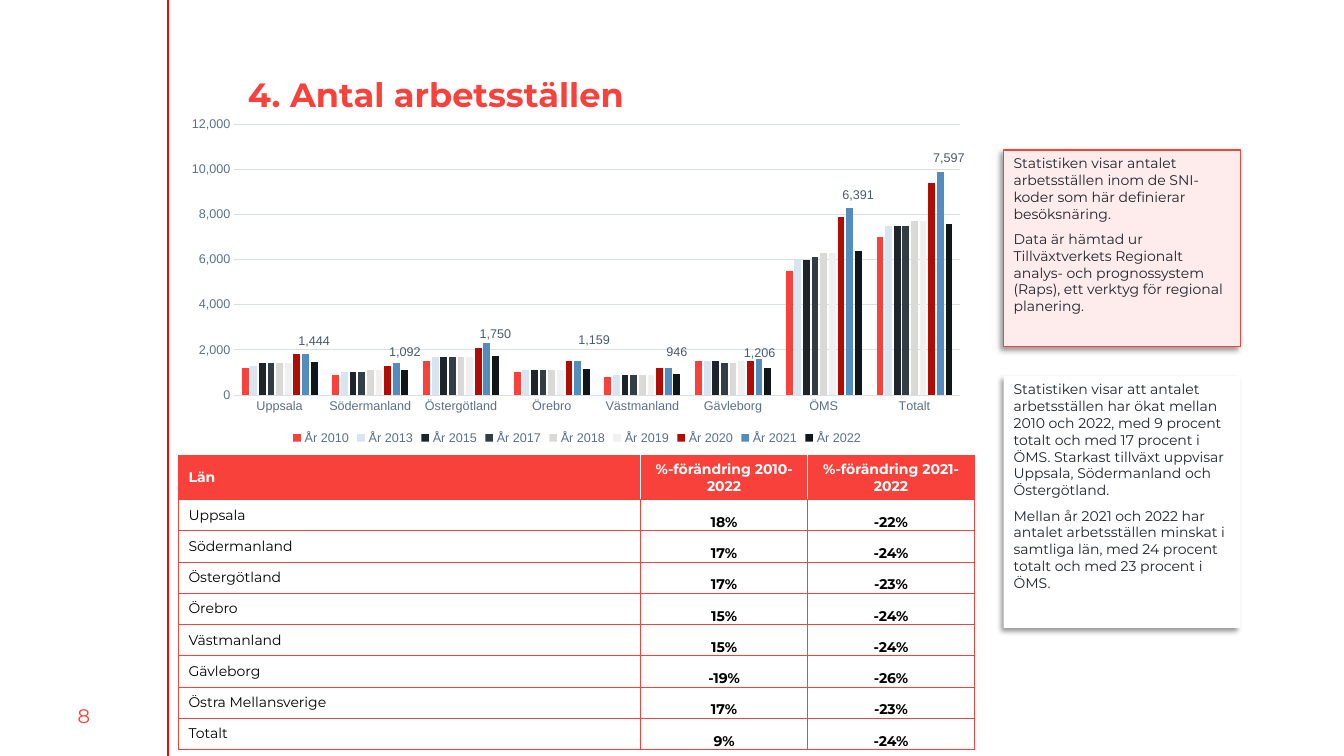
import pptx
import pptx.chart.data
import pptx.dml.color
import pptx.enum.chart
import pptx.enum.shapes
import pptx.enum.text
import pptx.oxml
import pptx.oxml.ns
import pptx.util

Pt = pptx.util.Pt
RGB = pptx.dml.color.RGBColor
qn = pptx.oxml.ns.qn
ALIGN = pptx.enum.text.PP_ALIGN
ANCHOR = pptx.enum.text.MSO_ANCHOR
KIND = pptx.enum.chart

RED = RGB(0xF8, 0x41, 0x3A)
RULE = RGB(0xFF, 0x00, 0x00)
PINK = RGB(0xFE, 0xEC, 0xEC)
WHITE = RGB(0xFF, 0xFF, 0xFF)
BLACK = RGB(0x00, 0x00, 0x00)
INK = RGB(0x1D, 0x24, 0x2B)
SLATE = RGB(0x5B, 0x71, 0x87)
LABEL = RGB(0x49, 0x5B, 0x6C)
GRID = RGB(0xD8, 0xDE, 0xE5)
PALE = RGB(0xD8, 0xE5, 0xF0)
COAL = RGB(0x33, 0x3D, 0x46)
GREY = RGB(0xD9, 0xD9, 0xD6)
MIST = RGB(0xF0, 0xF0, 0xF0)
WINE = RGB(0xB1, 0x0D, 0x06)
BLUE = RGB(0x54, 0x8D, 0xBD)
NIGHT = RGB(0x11, 0x16, 0x1A)

PLACES = ["Uppsala", "Södermanland", "Östergötland", "Örebro",
          "Västmanland", "Gävleborg", "ÖMS", "Totalt"]
YEARS = [
    ("År 2010", RED, [1200, 900, 1500, 1000, 800, 1500, 5500, 7000]),
    ("År 2013", PALE, [1300, 1000, 1700, 1100, 900, 1500, 6000, 7500]),
    ("År 2015", INK, [1400, 1000, 1700, 1100, 900, 1500, 6000, 7500]),
    ("År 2017", COAL, [1400, 1000, 1700, 1100, 900, 1400, 6100, 7500]),
    ("År 2018", GREY, [1400, 1100, 1700, 1100, 900, 1400, 6300, 7700]),
    ("År 2019", MIST, [1400, 1100, 1700, 1100, 900, 1500, 6300, 7700]),
    ("År 2020", WINE, [1800, 1300, 2100, 1500, 1200, 1500, 7900, 9400]),
    ("År 2021", BLUE, [1800, 1400, 2300, 1500, 1200, 1600, 8300, 9900]),
    ("År 2022", NIGHT, [1444, 1092, 1750, 1159, 946, 1206, 6391, 7597]),
]
SHIFTS = [(0, -0.03), (0, -0.02), (0, -0.03), (0.01, -0.05),
          (0, -0.03), (-0.01, -0.01), (0, -0.13), (0, -0.16)]
ROWS = [
    ("Län", "%-förändring 2010-2022", "%-förändring 2021-2022"),
    ("Uppsala", "18%", "-22%"),
    ("Södermanland", "17%", "-24%"),
    ("Östergötland", "17%", "-23%"),
    ("Örebro", "15%", "-24%"),
    ("Västmanland", "15%", "-24%"),
    ("Gävleborg", "-19%", "-26%"),
    ("Östra Mellansverige", "17%", "-23%"),
    ("Totalt", "9%", "-24%"),
]
ABOUT = [
    "Statistiken visar antalet arbetsställen inom de SNI-koder som här "
    "definierar besöksnäring.",
    "Data är hämtad ur Tillväxtverkets Regionalt analys- och prognossystem "
    "(Raps), ett verktyg för regional planering.",
]
RESULT = [
    "Statistiken visar att antalet arbetsställen har ökat mellan 2010 och "
    "2022, med 9 procent totalt och med 17 procent i ÖMS. Starkast tillväxt "
    "uppvisar Uppsala, Södermanland och Östergötland.",
    "Mellan år 2021 och 2022 har antalet arbetsställen minskat i samtliga "
    "län, med 24 procent totalt och med 23 procent i ÖMS.",
]


def style(font, size, color, bold=False, face="Montserrat"):
    font.size, font.name, font.bold = Pt(size), face, bold
    font.color.rgb = color


def layout(x, y, w=None, h=None):
    size = f'<c:w val="{w}"/><c:h val="{h}"/>' if w else ""
    inner = '<c:layoutTarget val="inner"/>' if w else ""
    mode = '<c:xMode val="edge"/><c:yMode val="edge"/>' if w else ""
    return pptx.oxml.parse_xml(
        f'<c:layout {pptx.oxml.ns.nsdecls("c")}><c:manualLayout>{inner}{mode}'
        f'<c:x val="{x}"/><c:y val="{y}"/>{size}</c:manualLayout></c:layout>')


def add_text(slide, box, words, size, bold=False, inset=3.6,
             align=ALIGN.LEFT, anchor=ANCHOR.TOP):
    frame = slide.shapes.add_textbox(*map(Pt, box)).text_frame
    frame.word_wrap = True
    frame.vertical_anchor = anchor
    frame.margin_left = frame.margin_right = Pt(inset)
    frame.margin_top = frame.margin_bottom = Pt(3.6)
    frame.text = words
    frame.paragraphs[0].alignment = align
    style(frame.paragraphs[0].runs[0].font, size, RED, bold)


def add_side(slide, box):
    left, top, wide, high = box
    line = slide.shapes.add_connector(
        pptx.enum.shapes.MSO_CONNECTOR.STRAIGHT,
        Pt(left + wide), Pt(top), Pt(left + wide), Pt(top + high))
    line.line.color.rgb, line.line.width = RULE, Pt(0.75)
    props = line.element.find(qn("p:spPr"))
    props.append(pptx.oxml.parse_xml(
        f'<a:effectLst {pptx.oxml.ns.nsdecls("a")}/>'))
    add_text(slide, (left, top + high - 43.2, wide, 28.8), "8", 14,
             align=ALIGN.CENTER, anchor=ANCHOR.MIDDLE)


def add_note(slide, box, parts, fill, edge=None):
    card = slide.shapes.add_shape(
        pptx.enum.shapes.MSO_SHAPE.RECTANGLE, *map(Pt, box))
    card.fill.solid()
    card.fill.fore_color.rgb = fill
    if edge is None:
        card.line.fill.background()
    else:
        card.line.color.rgb, card.line.width = edge, Pt(1)
    card.element.find(qn("p:spPr")).append(pptx.oxml.parse_xml(
        f'<a:effectLst {pptx.oxml.ns.nsdecls("a")}>'
        f'<a:outerShdw blurRad="{Pt(4)}" dist="{Pt(3)}" dir="8100000" '
        'algn="tr" rotWithShape="0"><a:srgbClr val="000000">'
        '<a:alpha val="40000"/></a:srgbClr></a:outerShdw></a:effectLst>'))
    frame = card.text_frame
    frame.word_wrap = True
    frame.vertical_anchor = ANCHOR.TOP
    frame.text = "\n".join(parts)
    for spot, para in enumerate(frame.paragraphs):
        para.alignment = ALIGN.LEFT
        para.space_before, para.space_after = Pt(3 if spot else 0), Pt(3)
        style(para.runs[0].font, 10, INK)


def add_bars(slide, box):
    data = pptx.chart.data.CategoryChartData(number_format="#,##0")
    data.categories = PLACES
    for name, _, counts in YEARS:
        data.add_series(name, counts)
    chart = slide.shapes.add_chart(
        KIND.XL_CHART_TYPE.COLUMN_CLUSTERED, *map(Pt, box), data).chart
    style(chart.font, 10, INK, face="Arial")
    chart.has_title = False
    chart.has_legend = True
    chart.legend.position = KIND.XL_LEGEND_POSITION.BOTTOM
    chart.legend.include_in_layout = False
    style(chart.legend.font, 9, SLATE, face="Arial")
    for axis in (chart.category_axis, chart.value_axis):
        axis.major_tick_mark = axis.minor_tick_mark = KIND.XL_TICK_MARK.NONE
        style(axis.tick_labels.font, 9, SLATE, face="Arial")
    base, scale = chart.category_axis.format.line, chart.value_axis
    scale.format.line.fill.background()
    scale.minimum_scale, scale.maximum_scale = 0, 12000
    scale.major_unit = 2000
    scale.tick_labels.number_format = "#,##0"
    scale.tick_labels.number_format_is_linked = False
    for line in (base, scale.major_gridlines.format.line):
        line.color.rgb, line.width = GRID, Pt(0.75)
    plot = chart.plots[0]
    plot.vary_by_categories = False
    plot.gap_width, plot.overlap = 219, -27
    for bars, (_, color, _) in zip(plot.series, YEARS):
        bars.format.fill.solid()
        bars.format.fill.fore_color.rgb = color
    last = plot.series[len(YEARS) - 1]
    for spot in range(len(PLACES)):
        tag = last.points[spot].data_label
        tag.position = KIND.XL_LABEL_POSITION.OUTSIDE_END
        style(tag.font, 9, LABEL, face="Arial")
    for tag, shift in zip(chart.element.iter(qn("c:dLbl")), SHIFTS):
        tag.insert(1, layout(*shift))
    for group in chart.element.iter(qn("c:dLbls")):
        for lead in group.findall(qn("c:showLeaderLines")):
            lead.set("val", "0")
        group.append(pptx.oxml.parse_xml(
            f'<c:extLst {pptx.oxml.ns.nsdecls("c")}>'
            '<c:ext uri="{CE6537A1-D6FC-4f65-9D91-7224C49458BB}" xmlns:c15='
            '"http://schemas.microsoft.com/office/drawing/2012/chart">'
            '<c15:showLeaderLines val="0"/></c:ext></c:extLst>'))
    area = next(chart.element.iter(qn("c:plotArea")))
    for old in area.findall(qn("c:layout")):
        area.remove(old)
    area.insert(0, layout(0.07, 0.04, 0.91, 0.8))


def set_edge(cell, side, color):
    cell.get_or_add_tcPr().append(pptx.oxml.parse_xml(
        f'<a:{side} {pptx.oxml.ns.nsdecls("a")} w="{Pt(0.75)}"><a:solidFill>'
        f'<a:srgbClr val="{color}"/></a:solidFill></a:{side}>'))


def add_grid(slide, box):
    wide, high = box[2:]
    table = slide.shapes.add_table(len(ROWS), 3, *map(Pt, box)).table
    head, side = 30.6, 119.2
    for col, width in zip(table.columns, (wide - 2 * side, side, side)):
        col.width = Pt(width)
    for spot, row in enumerate(table.rows):
        row.height = Pt((high - head) / (len(ROWS) - 1) if spot else head)
    for y, row in enumerate(ROWS):
        for x, words in enumerate(row):
            cell = table.cell(y, x)
            cell.text = words
            para = cell.text_frame.paragraphs[0]
            para.alignment = ALIGN.CENTER if x else ALIGN.LEFT
            style(para.runs[0].font, 10, BLACK if y else WHITE, not y or x > 0)
            cell.vertical_anchor = ANCHOR.MIDDLE
            if x and y:
                cell.vertical_anchor = ANCHOR.BOTTOM
                cell.margin_left = cell.margin_right = Pt(0.7)
                cell.margin_top, cell.margin_bottom = Pt(0.7), 0
            set_edge(cell._tc, "lnL", WHITE if x and not y else RED)
            set_edge(cell._tc, "lnR", WHITE if x < 2 and not y else RED)
            for edge in ("lnT", "lnB"):
                set_edge(cell._tc, edge, RED)
            cell.fill.solid()
            cell.fill.fore_color.rgb = WHITE if y else RED


def main():
    """Build the slide on workplaces per county and save it."""
    deck = pptx.Presentation()
    deck.slide_width, deck.slide_height = Pt(960), Pt(540)
    slide = deck.slides.add_slide(deck.slide_layouts[6])
    add_side(slide, (0, 0, 120, 540))
    add_text(slide, (173.5, 49, 766, 64), "4. Antal arbetsställen", 24, True)
    add_note(slide, (717, 107, 169, 140.5), ABOUT, PINK, RED)
    add_note(slide, (717, 268.5, 169, 180), RESULT, WHITE)
    add_grid(slide, (127.5, 325.5, 568.5, 209.5))
    add_bars(slide, (127.5, 79, 569.5, 242))
    deck.save("out.pptx")


if __name__ == "__main__":
    main()
